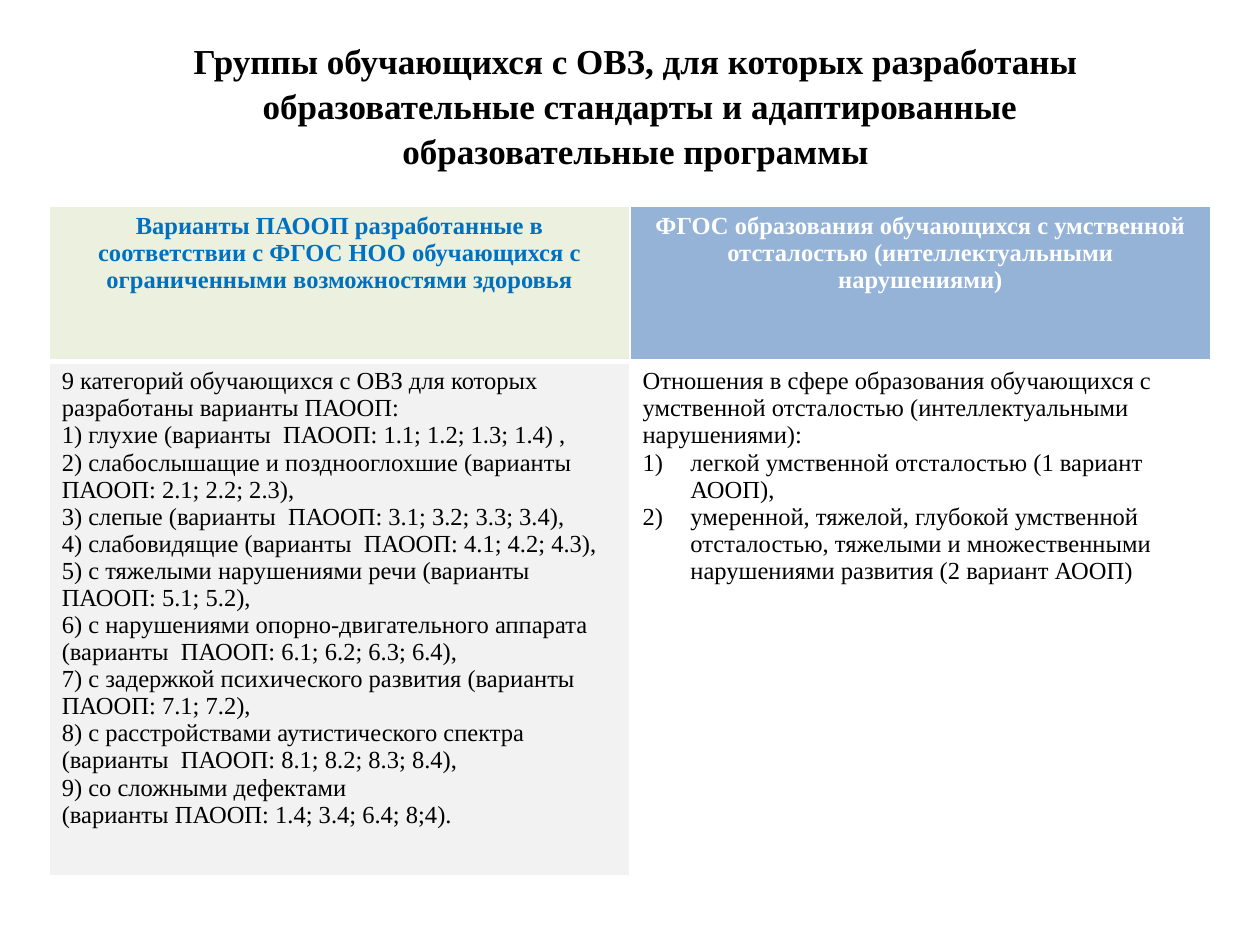
import pptx
import pptx.util
import pptx.dml.color
import pptx.enum.text
import pptx.oxml.ns
from dataclasses import dataclass
from lxml import etree
from pptx.util import Inches


@dataclass(frozen=True)
class Theme:
    font: str = "Times New Roman"
    title_size: int = 20
    table_size: int = 14
    black: str = "000000"
    white: str = "FFFFFF"
    blue: str = "0070C0"
    pale_green: str = "EBF1DE"
    soft_blue: str = "95B3D7"
    light_grey: str = "F2F2F2"


theme = Theme()
qn = pptx.oxml.ns.qn
center = pptx.enum.text.PP_ALIGN.CENTER


def write_paragraph(para, text, size, color, bold=False, align=None):
    para.text = text
    para.alignment = align
    para.font.name = theme.font
    para.font.size = pptx.util.Pt(size)
    para.font.bold = bold
    para.font.color.rgb = pptx.dml.color.RGBColor.from_string(color)


def set_borders(cell, bottom_width):
    """Draw white cell borders, 1 pt wide except for the bottom one."""
    properties = cell._tc.get_or_add_tcPr()
    widths = {"lnL": 1, "lnR": 1, "lnT": 1, "lnB": bottom_width}
    for position, (side, width) in enumerate(widths.items()):
        line = etree.Element(qn(f"a:{side}"), w=str(pptx.util.Pt(width)))
        fill = etree.SubElement(line, qn("a:solidFill"))
        etree.SubElement(fill, qn("a:srgbClr"), val=theme.white)
        properties.insert(position, line)


deck = pptx.Presentation()
deck.slide_width, deck.slide_height = Inches(10), Inches(7.5)
page = deck.slides.add_slide(deck.slide_layouts[6])

title_box = page.shapes.add_textbox(Inches(1.41), Inches(0.31), Inches(7.34), Inches(1.03))
title = title_box.text_frame
title.word_wrap = True
title.margin_top = title.margin_bottom = 0
title.vertical_anchor = pptx.enum.text.MSO_ANCHOR.MIDDLE
write_paragraph(
    title.paragraphs[0],
    "Группы обучающихся с ОВЗ, для которых разработаны  образовательные стандарты "
    "и адаптированные образовательные программы ",
    theme.title_size, theme.black, bold=True, align=center)
title.paragraphs[0].line_spacing = 1.08

headings = [
    ("Варианты ПАООП разработанные в соответствии с ФГОС НОО обучающихся "
     "с ограниченными возможностями здоровья", theme.blue, theme.pale_green),
    ("ФГОС образования обучающихся с умственной отсталостью "
     "(интеллектуальными нарушениями)", theme.white, theme.soft_blue),
]
categories = [
    "9 категорий обучающихся с ОВЗ для которых разработаны варианты ПАООП:",
    "1) глухие (варианты  ПАООП: 1.1; 1.2; 1.3; 1.4) ,",
    "2) слабослышащие и позднооглохшие (варианты  ПАООП: 2.1; 2.2; 2.3),",
    "3) слепые (варианты  ПАООП: 3.1; 3.2; 3.3; 3.4),",
    "4) слабовидящие (варианты  ПАООП: 4.1; 4.2; 4.3),",
    "5) с тяжелыми нарушениями речи (варианты  ПАООП: 5.1; 5.2),",
    "6) с нарушениями опорно-двигательного аппарата (варианты  ПАООП: 6.1; 6.2; 6.3; 6.4),",
    "7) с задержкой психического развития (варианты  ПАООП: 7.1; 7.2),",
    "8) с расстройствами аутистического спектра (варианты  ПАООП: 8.1; 8.2; 8.3; 8.4),",
    "9) со сложными дефектами",
    "(варианты ПАООП: 1.4; 3.4; 6.4; 8;4).",
]
disabilities = [
    "Отношения в сфере образования обучающихся с умственной отсталостью "
    "(интеллектуальными нарушениями):",
    "легкой умственной отсталостью (1 вариант АООП),",
    "умеренной, тяжелой, глубокой умственной отсталостью, тяжелыми "
    "и множественными нарушениями развития (2 вариант АООП)",
]

table = page.shapes.add_table(
    2, 2, Inches(0.39), Inches(1.64), Inches(9.22), Inches(5.31)).table
for row, height in zip(table.rows, (1.23, 4.08)):
    row.height = Inches(height)

for column, (heading, color, fill) in enumerate(headings):
    cell = table.cell(0, column)
    write_paragraph(cell.text_frame.paragraphs[0], heading,
                    theme.table_size, color, bold=True, align=center)
    cell.fill.solid()
    cell.fill.fore_color.rgb = pptx.dml.color.RGBColor.from_string(fill)
    set_borders(cell, bottom_width=3)

for column, lines in enumerate((categories, disabilities)):
    cell = table.cell(1, column)
    frame = cell.text_frame
    for index, line in enumerate(lines):
        para = frame.add_paragraph() if index else frame.paragraphs[0]
        write_paragraph(para, line, theme.table_size, theme.black)
    set_borders(cell, bottom_width=1)

categories_cell, disabilities_cell = table.cell(1, 0), table.cell(1, 1)
categories_cell.fill.solid()
categories_cell.fill.fore_color.rgb = pptx.dml.color.RGBColor.from_string(theme.light_grey)
disabilities_cell.fill.background()

for para in disabilities_cell.text_frame.paragraphs[1:]:
    properties = para._p.get_or_add_pPr()
    properties.set("marL", str(Inches(0.38)))
    properties.set("indent", str(Inches(-0.38)))
    numbering = etree.Element(qn("a:buAutoNum"), type="arabicParenR")
    properties.find(qn("a:defRPr")).addprevious(numbering)

deck.save("out.pptx")
